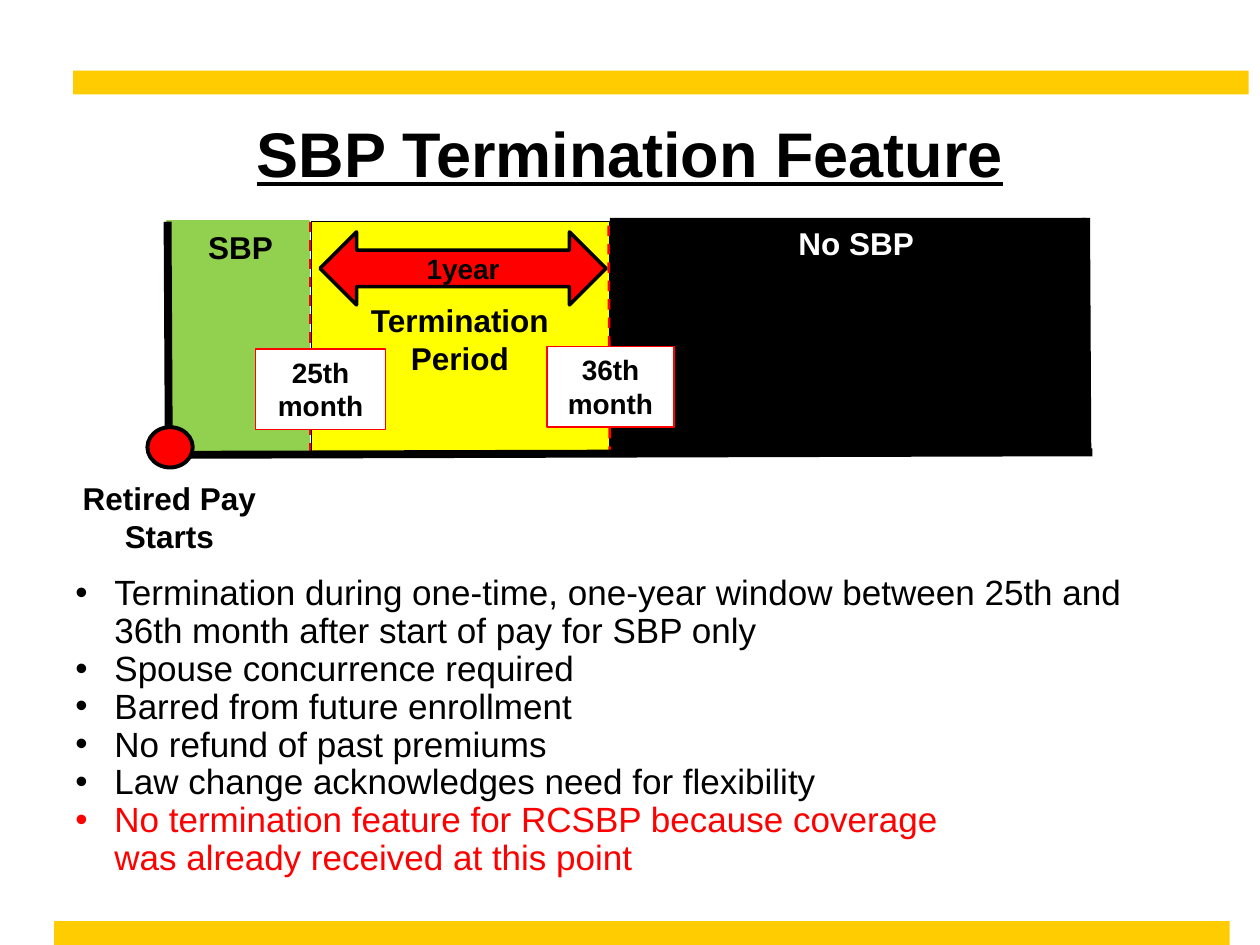
from dataclasses import dataclass
from typing import Optional

import pptx
import pptx.dml.color
import pptx.enum.dml
import pptx.enum.shapes
import pptx.enum.text
import pptx.util
from lxml import etree
from pptx.oxml.ns import qn

RGBColor = pptx.dml.color.RGBColor
Shape = pptx.enum.shapes.MSO_SHAPE
Anchor = pptx.enum.text.MSO_ANCHOR
Align = pptx.enum.text.PP_ALIGN

BLACK = RGBColor(0, 0, 0)
WHITE = RGBColor(255, 255, 255)
RED = RGBColor(255, 0, 0)
YELLOW = RGBColor(255, 255, 0)
GREEN = RGBColor(0x92, 0xD0, 0x50)
GOLD = RGBColor(0xFF, 0xCC, 0x01)

# Grid of 100 columns by 75 rows over the whole slide
WIDTH, HEIGHT = pptx.util.Inches(10), pptx.util.Inches(7.5)
COLUMN, ROW = WIDTH / 100, HEIGHT / 75

# Timeline edges, in columns and rows
START, MONTH_25, MONTH_36, END = 13.3, 24.6, 48.4, 86.2
TOP, BASE = 17.6, 36.1


@dataclass
class Area:
    left: float
    top: float
    width: float
    height: float

    def lengths(self) -> tuple[int, ...]:
        return (round(self.left * COLUMN), round(self.top * ROW),
                round(self.width * COLUMN), round(self.height * ROW))


@dataclass
class Block:
    area: Area
    fill: Optional[RGBColor] = None
    line: Optional[RGBColor] = None
    line_width: float = 0.75
    kind: Shape = Shape.RECTANGLE
    text: str = ""
    size: float = 18
    color: RGBColor = BLACK
    anchor: Anchor = Anchor.TOP


@dataclass
class Rule:
    x1: float
    y1: float
    x2: float
    y2: float
    color: RGBColor = BLACK
    width: float = 4.5
    dashed: bool = False


def set_font(paragraph, size: float, color: RGBColor, bold: bool = False) -> None:
    font = paragraph.font
    font.name, font.size, font.bold = "Arial", pptx.util.Pt(size), bold
    font.color.rgb = color


def draw_block(slide, block: Block) -> None:
    shape = slide.shapes.add_shape(block.kind, *block.area.lengths())
    shape.shadow.inherit = False
    if block.fill is None:
        shape.fill.background()
    else:
        shape.fill.solid()
        shape.fill.fore_color.rgb = block.fill
    if block.line is None:
        shape.line.fill.background()
    else:
        shape.line.color.rgb = block.line
        shape.line.width = pptx.util.Pt(block.line_width)
    if block.text:
        draw_label(shape.text_frame, block)


def draw_label(frame, block: Block) -> None:
    frame.word_wrap = True
    frame.vertical_anchor = block.anchor
    frame.text = block.text
    for paragraph in frame.paragraphs:
        paragraph.alignment = Align.CENTER
        set_font(paragraph, block.size, block.color, bold=True)


def draw_text(slide, block: Block) -> None:
    draw_label(slide.shapes.add_textbox(*block.area.lengths()).text_frame, block)


def draw_rule(slide, rule: Rule) -> None:
    connector = slide.shapes.add_connector(
        pptx.enum.shapes.MSO_CONNECTOR.STRAIGHT,
        round(rule.x1 * COLUMN), round(rule.y1 * ROW),
        round(rule.x2 * COLUMN), round(rule.y2 * ROW))
    connector.line.color.rgb = rule.color
    connector.line.width = pptx.util.Pt(rule.width)
    if rule.dashed:
        connector.line.dash_style = pptx.enum.dml.MSO_LINE.DASH
    etree.SubElement(connector._element.spPr, qn("a:effectLst"))


def draw_bullets(slide, area: Area, points: list[tuple[str, RGBColor]]) -> None:
    frame = slide.shapes.add_textbox(*area.lengths()).text_frame
    frame.word_wrap = True
    frame.text = "\n".join(text for text, _ in points)
    indent = pptx.util.Inches(0.31)
    for paragraph, (_, color) in zip(frame.paragraphs, points):
        paragraph.line_spacing = 0.9
        properties = paragraph._p.get_or_add_pPr()
        properties.set("marL", str(indent))
        properties.set("indent", str(-indent))
        etree.SubElement(properties, qn("a:buFont"), typeface="Arial")
        etree.SubElement(properties, qn("a:buChar"), char="•")
        set_font(paragraph, 20, color)


def draw_title(slide, area: Area, text: str) -> None:
    title = slide.shapes.title
    title.left, title.top, title.width, title.height = area.lengths()
    draw_label(title.text_frame, Block(area, text=text, size=36, anchor=Anchor.MIDDLE))
    title.text_frame.auto_size = pptx.enum.text.MSO_AUTO_SIZE.NONE
    title.text_frame.paragraphs[0].font.underline = True


def main() -> None:
    deck = pptx.Presentation()
    deck.slide_width, deck.slide_height = WIDTH, HEIGHT
    slide = deck.slides.add_slide(deck.slide_layouts[5])

    # Gold bands and title
    for left, top in ((5.8, 5.6), (4.3, 73.1)):
        draw_block(slide, Block(Area(left, top, 93.3, 1.9), GOLD))
    draw_title(slide, Area(5, 7.2, 90, 9.7), "SBP Termination Feature")

    # Periods of the timeline
    draw_block(slide, Block(Area(MONTH_36, 17.3, END - MONTH_36, 18.6), BLACK))
    draw_text(slide, Block(Area(53.8, 17.3, 28.3, 4), text="No SBP", color=WHITE))
    draw_block(slide, Block(Area(24.7, TOP, 23.7, 18.3), YELLOW, BLACK))
    draw_block(slide, Block(Area(START, TOP, 11.2, 18.5), GREEN, GREEN, 2))
    draw_block(slide, Block(Area(14.9, TOP, 8.4, 2.6), GREEN, text="SBP"))

    # Start of pay and the month limits
    draw_rule(slide, Rule(START, TOP, 13.4, 36))
    draw_rule(slide, Rule(MONTH_25, TOP, MONTH_25, BASE, RED, 1.5, True))
    draw_rule(slide, Rule(48.3, 17.9, MONTH_36, BASE, RED, 1.5, True))
    for area, text in ((Area(20.3, 27.7, 10.3, 6.4), "25th month"),
                       (Area(43.4, 27.5, 10.1, 6.4), "36th month")):
        draw_block(slide, Block(area, WHITE, RED, text=text, size=16))
    draw_block(slide, Block(Area(25.4, 18.4, 22.7, 5.8), RED, BLACK, 2,
                            Shape.LEFT_RIGHT_ARROW, "1year", 16,
                            anchor=Anchor.MIDDLE))

    # Closing edge, baseline and starting point
    draw_rule(slide, Rule(END, 17.3, 86.3, BASE))
    draw_rule(slide, Rule(86.7, 35.9, START, BASE))
    draw_block(slide, Block(Area(11.7, 33.9, 3.6, 3.2), RED, BLACK, 2.25, Shape.OVAL))

    # Conditions
    draw_bullets(slide, Area(5, 45.2, 90, 28.9), [
        ("Termination during one-time, one-year window between 25th and "
         "36th month after start of pay for SBP only", BLACK),
        ("Spouse concurrence required", BLACK),
        ("Barred from future enrollment", BLACK),
        ("No refund of past premiums", BLACK),
        ("Law change acknowledges need for flexibility", BLACK),
        ("No termination feature for RCSBP because coverage\v"
         "was already received at this point", RED),
    ])

    # Free captions
    draw_text(slide, Block(Area(MONTH_25, 23.4, 23.8, 7.1), text="Termination Period"))
    draw_text(slide, Block(Area(5.1, 37.5, 16.7, 7.1), text="Retired Pay\nStarts"))

    deck.save("out.pptx")


if __name__ == "__main__":
    main()
